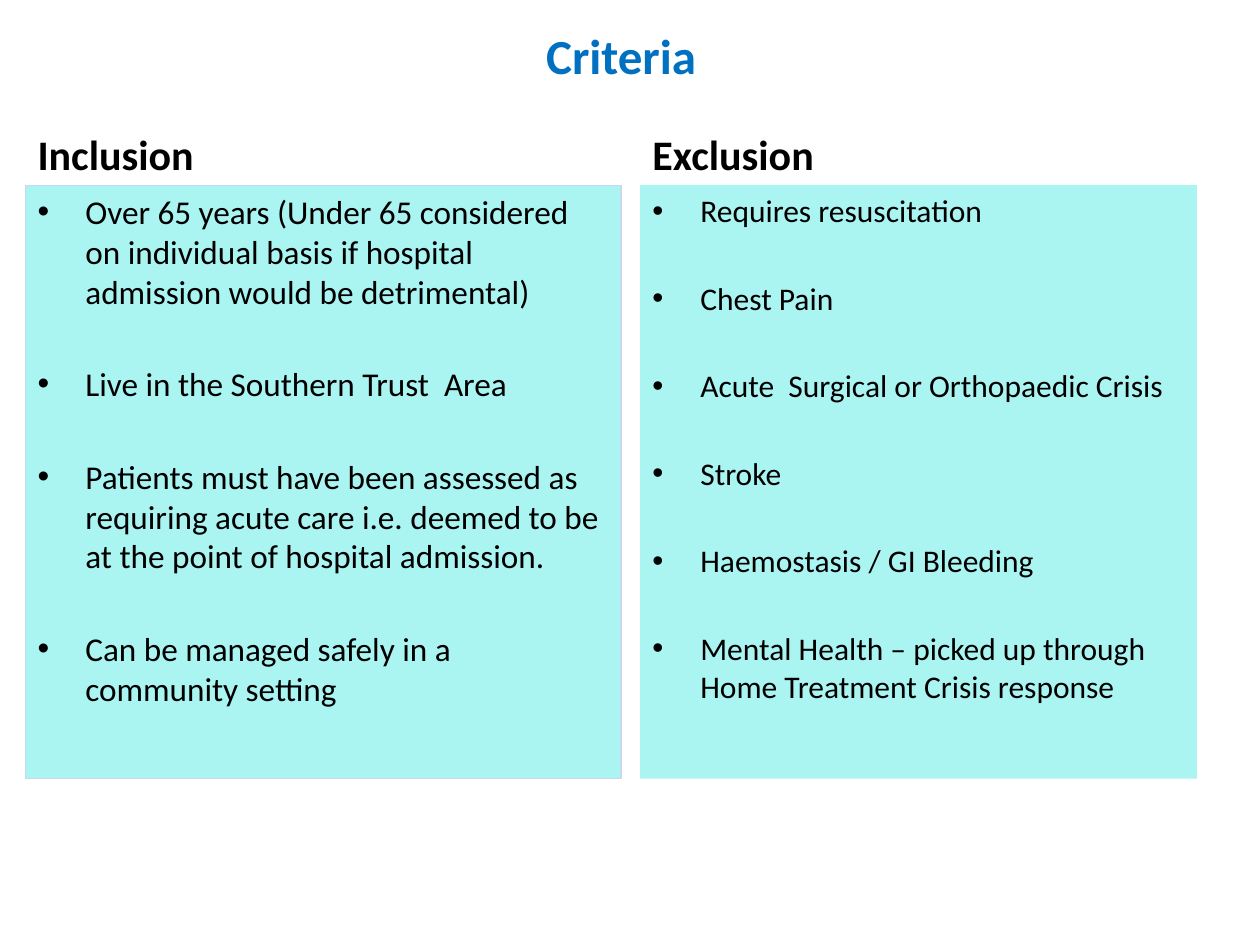
"""Build the Criteria slide comparing inclusion and exclusion lists."""
from lxml import etree
from pptx import Presentation
from pptx.dml.color import RGBColor
from pptx.enum.text import MSO_ANCHOR, PP_ALIGN
from pptx.oxml.ns import qn
from pptx.util import Inches, Pt

MIDDLE, BOTTOM, TOP = MSO_ANCHOR.MIDDLE, MSO_ANCHOR.BOTTOM, MSO_ANCHOR.TOP
CENTER = PP_ALIGN.CENTER

TITLE = "Criteria"
COLUMNS = [
    {
        "heading": "Inclusion", "left": 0.2, "width": 4.73,
        "size": 19, "gap": 30, "border": "C6D9F1",
        "criteria": [
            "Over 65 years (Under 65 considered on individual basis if hospital admission would be detrimental)",
            "Live in the Southern Trust  Area",
            "Patients must have been assessed as requiring acute care i.e. deemed to be at the point of hospital admission.",
            "Can be managed safely in a community setting",
        ],
    },
    {
        "heading": "Exclusion", "left": 5.08, "width": 4.42,
        "size": 18, "gap": 28.4, "border": None,
        "criteria": [
            "Requires resuscitation",
            "Chest Pain",
            "Acute  Surgical or Orthopaedic Crisis",
            "Stroke",
            "Haemostasis / GI Bleeding",
            "Mental Health – picked up through Home Treatment Crisis response",
        ],
    },
]
HEADING_TOP, HEADING_HEIGHT, LIST_HEIGHT = 0.84, 0.63, 4.71
INDENT = 0.38


def color(hex_code):
    return RGBColor.from_string(hex_code)


def style(paragraph, size, hex_code="000000", bold=False):
    font = paragraph.font
    font.name, font.size, font.bold = "Calibri", Pt(size), bold
    font.color.rgb = color(hex_code)


def add_panel(slide, left, top, width, height, fill, anchor):
    panel = slide.shapes.add_textbox(
        Inches(left), Inches(top), Inches(width), Inches(height))
    panel.fill.solid()
    panel.fill.fore_color.rgb = color(fill)
    panel.text_frame.word_wrap = True
    panel.text_frame.vertical_anchor = anchor
    return panel


def add_bullet(paragraph):
    properties = paragraph._p.get_or_add_pPr()
    properties.set("marL", str(Inches(INDENT)))
    properties.set("indent", str(-Inches(INDENT)))
    etree.SubElement(properties, qn("a:buFont")).set("typeface", "Arial")
    etree.SubElement(properties, qn("a:buChar")).set("char", "•")


def add_column(slide, column):
    left, width = column["left"], column["width"]
    heading = add_panel(slide, left, HEADING_TOP, width, HEADING_HEIGHT, "FFFFFF", BOTTOM)
    heading.text_frame.text = column["heading"]
    style(heading.text_frame.paragraphs[0], 24, bold=True)

    criteria = add_panel(
        slide, left, HEADING_TOP + HEADING_HEIGHT, width, LIST_HEIGHT, "AAF4F2", TOP)
    if column["border"]:
        criteria.line.color.rgb = color(column["border"])
        criteria.line.width = Pt(0.75)
    criteria.text_frame.text = "\n".join(column["criteria"])
    for criterion in criteria.text_frame.paragraphs:
        style(criterion, column["size"])
        criterion.space_after = Pt(column["gap"])
        add_bullet(criterion)


def main():
    presentation = Presentation()
    presentation.slide_width, presentation.slide_height = Inches(10), Inches(7.5)
    slide = presentation.slides.add_slide(presentation.slide_layouts[5])

    title = slide.shapes.title
    title.left, title.top = Inches(0.43), Inches(0.05)
    title.width, title.height = Inches(9), Inches(0.77)
    title.text_frame.text = TITLE
    title.text_frame.vertical_anchor = MIDDLE
    title.text_frame.paragraphs[0].alignment = CENTER
    style(title.text_frame.paragraphs[0], 28, "0070C0", bold=True)

    for column in COLUMNS:
        add_column(slide, column)
    presentation.save("out.pptx")


if __name__ == "__main__":
    main()
